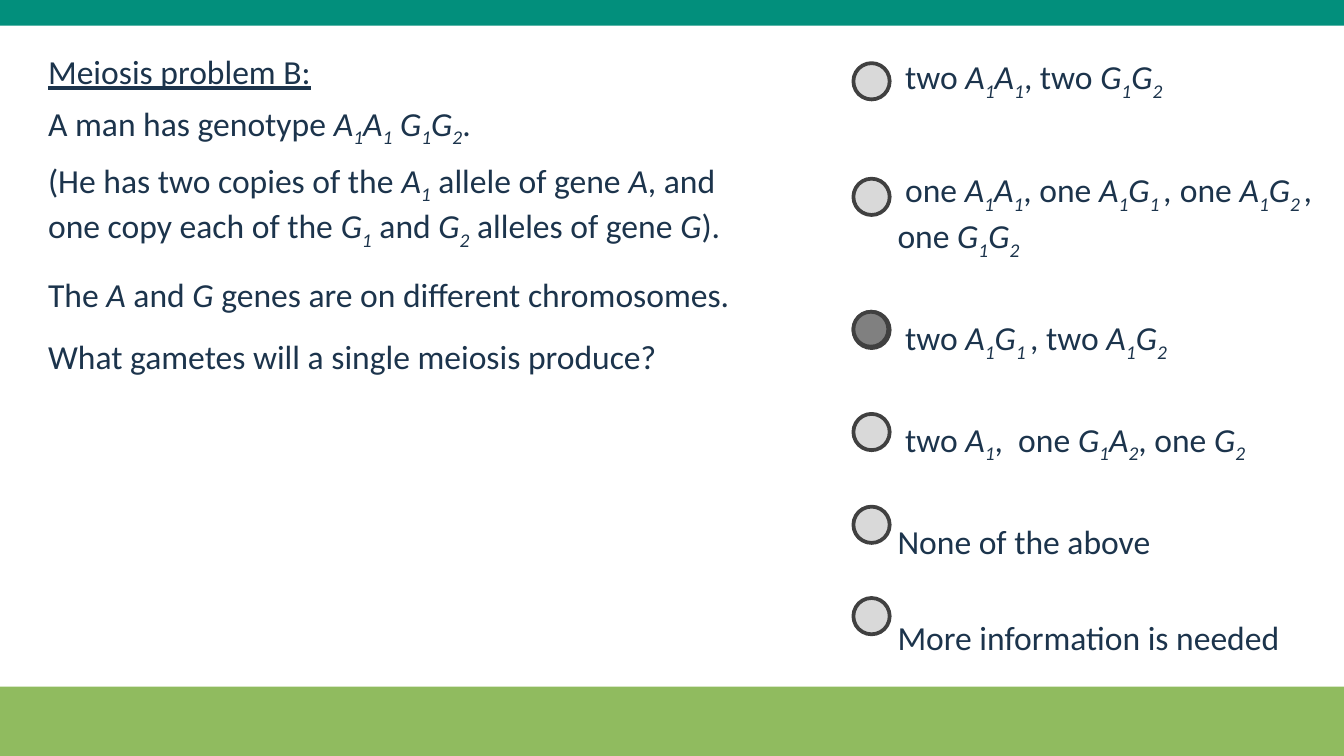
import pptx
import pptx.dml.color
import pptx.enum.shapes
import pptx.enum.text
import pptx.util

Inches, Pt = pptx.util.Inches, pptx.util.Pt


def rgb(hex_code):
    return pptx.dml.color.RGBColor.from_string(hex_code)


def split_runs(markup):
    """Yield (text, italic, subscript); * toggles italic, {} holds a subscript."""
    text, italic, subscript = "", False, False
    for char in markup:
        if char not in "*{}":
            text += char
            continue
        if text:
            yield text, italic, subscript
        text = ""
        if char == "*":
            italic = not italic
        else:
            subscript = char == "{"
    if text:
        yield text, italic, subscript


class QuizSlide:
    FONT, SIZE, INK = "Calibri", 18, "1C344C"
    OUTLINE = "404040"

    def __init__(self, slide):
        self.slide = slide

    def shape(self, kind, box, fill, outline=None, parent=None):
        shapes = (parent or self.slide).shapes
        shape = shapes.add_shape(kind, *map(Inches, box))
        shape.shadow.inherit = False
        shape.fill.solid()
        shape.fill.fore_color.rgb = rgb(fill)
        if outline:
            shape.line.color.rgb = rgb(outline)
            shape.line.width = Pt(2)
        else:
            shape.line.fill.background()

    def band(self, top, height, fill):
        kind = pptx.enum.shapes.MSO_SHAPE.RECTANGLE
        self.shape(kind, (0, top, 10.04, height), fill)

    def bubble(self, top, size, fill, parent=None):
        kind = pptx.enum.shapes.MSO_SHAPE.OVAL
        self.shape(kind, (6.35, top, size, size), fill, self.OUTLINE, parent)

    def text(self, box, paragraphs):
        """Add paragraphs given as (markup, space after, underline)."""
        frame = self.slide.shapes.add_textbox(*map(Inches, box)).text_frame
        frame.word_wrap = True
        frame.auto_size = pptx.enum.text.MSO_AUTO_SIZE.SHAPE_TO_FIT_TEXT
        for index, (markup, space_after, underline) in enumerate(paragraphs):
            paragraph = frame.add_paragraph() if index else frame.paragraphs[0]
            paragraph.space_after = Pt(space_after)
            for text, italic, subscript in split_runs(markup):
                run = paragraph.add_run()
                run.text = text
                run.font.name = self.FONT
                run.font.size = Pt(self.SIZE)
                run.font.color.rgb = rgb(self.INK)
                run.font.italic = italic
                run.font.underline = underline
                if subscript:
                    run._r.get_or_add_rPr().set("baseline", "-25000")


PROBLEM = [
    ("Meiosis problem B:", 6, True),
    ("A man has genotype *A{1}A{1} G{1}G{2}*.", 6, False),
    ("(He has two copies of the *A{1}* allele of gene *A*, and one copy each "
     "of the *G{1}* and* G{2}* alleles of gene *G*).", 12, False),
    ("The *A* and *G* genes are on different chromosomes.", 12, False),
    ("What gametes will a single meiosis produce?", 12, False),
]
ANSWERS = [
    " two *A{1}A{1}*, two *G{1}G{2}*",
    " one *A{1}A{1}*, one *A{1}G{1 }, *one *A{1}G{2 },* one *G{1}G{2}*",
    " two *A{1}G{1 }*, two *A{1}G{2}*",
    " two *A{1}*,  one *G{1}A{2}*, one *G{2}*",
    "None of the above",
    "More information is needed",
]
BUBBLE_TOPS = [0.47, 1.33, 2.32, 3.08, 3.77, 4.45]
CORRECT = 2

# Widescreen slide, 16:9
deck = pptx.Presentation()
deck.slide_width, deck.slide_height = Inches(10), Inches(10 * 9 / 16)
quiz = QuizSlide(deck.slides.add_slide(deck.slide_layouts[6]))

# Problem statement
quiz.text((0.26, 0.33, 5.43, 2.42), PROBLEM)

# Bottom and top bands
quiz.band(5.11, 0.53, "90BB5F")
quiz.band(0, 0.19, "028F7C")

# Answers, with a wider gap after the first
quiz.text((6.58, 0.37, 3.5, 4.41),
          [(answer, 30 if index else 36, False)
           for index, answer in enumerate(ANSWERS)])

# Answer bubbles, the correct one marked
bubbles = quiz.slide.shapes.add_group_shape()
for top in BUBBLE_TOPS:
    quiz.bubble(top, 0.27, "D9D9D9", bubbles)
quiz.bubble(BUBBLE_TOPS[CORRECT], 0.26, "808080")

deck.save("out.pptx")
